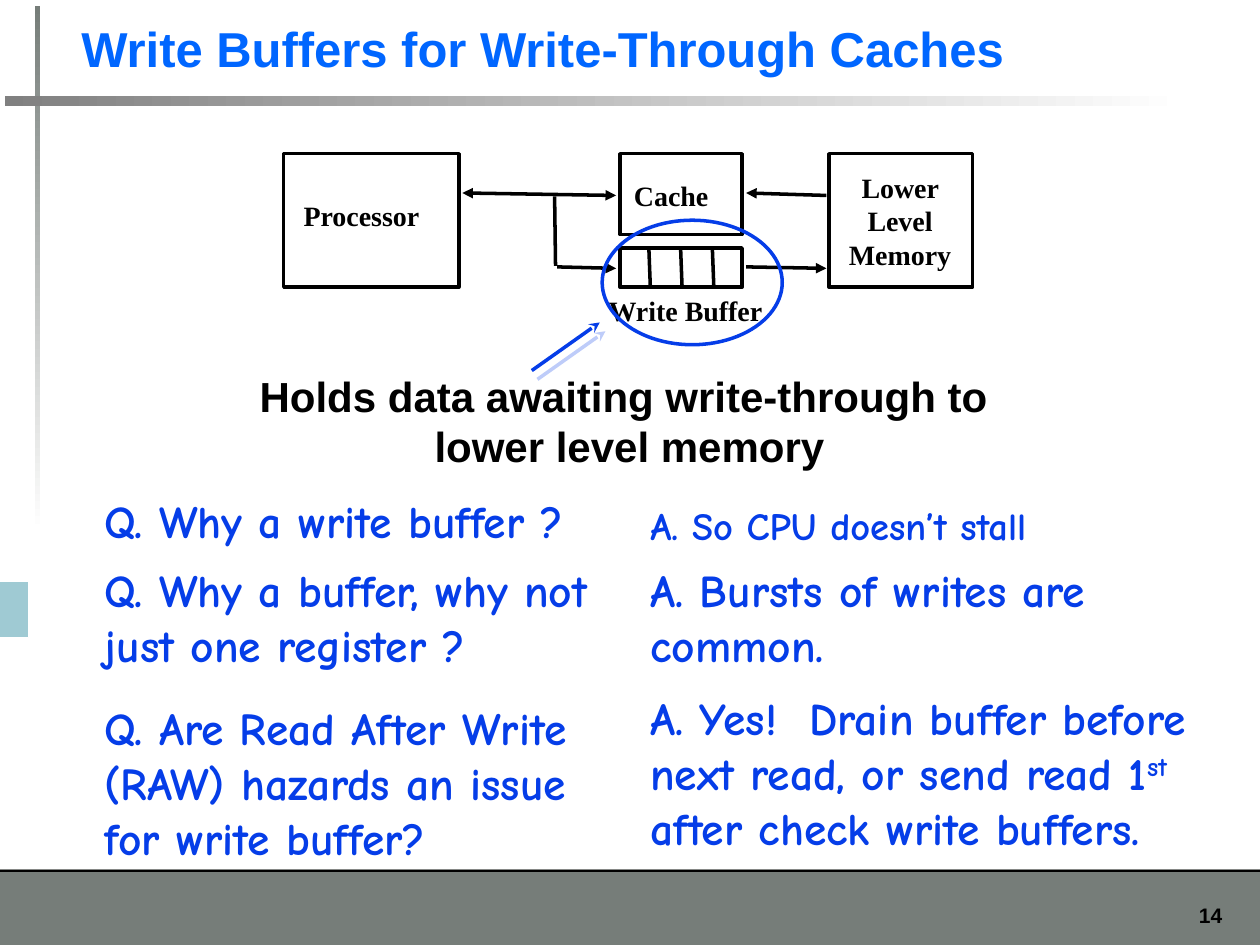
from lxml.etree import SubElement
from pptx import Presentation
from pptx.dml.color import RGBColor
from pptx.enum.shapes import MSO_CONNECTOR, MSO_SHAPE
from pptx.enum.text import MSO_ANCHOR, PP_ALIGN
from pptx.oxml.ns import qn
from pptx.util import Cm, Pt

BLACK, WHITE, GREY, BLUE = "000000", "FFFFFF", "767D79", "053DE8"
QUESTION_LEFT, ANSWER_LEFT = 2.11, 13.11


def colour(hex_value):
    """Turn a hex string into a colour."""
    return RGBColor.from_string(hex_value)


def add_span(para, text, font, size, hex_value, raised=False):
    """Add one bold run, raised as a superscript if asked."""
    span = para.add_run()
    span.text = text
    span.font.name = font
    span.font.size = Pt(size)
    span.font.bold = True
    span.font.color.rgb = colour(hex_value)
    if raised:
        span._r.get_or_add_rPr().set("baseline", "30000")


def add_text(shapes, place, lines, font, size, hex_value=BLACK,
             align=PP_ALIGN.LEFT, spacing=None):
    """Add a wrapped text box; each line is a list of text pieces, odd ones raised."""
    box = shapes.add_textbox(*map(Cm, place))
    frame = box.text_frame
    frame.word_wrap = True
    frame.margin_left = frame.margin_right = Cm(0)
    frame.margin_top = frame.margin_bottom = Cm(0)
    for index, pieces in enumerate(lines):
        para = frame.add_paragraph() if index else frame.paragraphs[0]
        para.alignment = align
        if spacing:
            para.line_spacing = Pt(spacing)
        for number, piece in enumerate(pieces):
            add_span(para, piece, font, size, hex_value, number % 2 == 1)


def add_block(shapes, place, fill=None, line=None, width=2, kind=MSO_SHAPE.RECTANGLE):
    """Add a shape with an optional solid fill and outline."""
    block = shapes.add_shape(kind, *map(Cm, place))
    block.shadow.inherit = False
    if fill:
        block.fill.solid()
        block.fill.fore_color.rgb = colour(fill)
    else:
        block.fill.background()
    if line:
        block.line.color.rgb = colour(line)
        block.line.width = Pt(width)
    else:
        block.line.fill.background()
    return block


def add_fading_bar(shapes, place, start, angle):
    """Add a bar that fades from a colour to white."""
    bar = add_block(shapes, place)
    bar.fill.gradient()
    bar.fill.gradient_angle = angle
    for stop, hex_value in zip(bar.fill.gradient_stops, (start, WHITE)):
        stop.color.rgb = colour(hex_value)


def add_line(shapes, start, end, hex_value=BLACK, head=None, tail=None):
    """Add a straight line with optional arrowheads and return its effect list."""
    line = shapes.add_connector(MSO_CONNECTOR.STRAIGHT, *map(Cm, start + end))
    line.line.color.rgb = colour(hex_value)
    line.line.width = Pt(2)
    outline = line.line._get_or_add_ln()
    for tag, kind in (("a:headEnd", head), ("a:tailEnd", tail)):
        if kind:
            SubElement(outline, qn(tag), type=kind)
    return SubElement(line._element.spPr, qn("a:effectLst"))


def add_shadow(effects, hex_value):
    """Put a pale offset shadow into an effect list."""
    shadow = SubElement(effects, qn("a:outerShdw"), dist=str(Pt(6)), dir="3420000")
    tint = SubElement(shadow, qn("a:srgbClr"), val=hex_value)
    SubElement(tint, qn("a:alpha"), val="25000")


def add_title(page):
    """Place and format the title."""
    title = page.shapes.title
    title.left, title.top, title.width, title.height = map(Cm, (0.2, 0.13, 24.92, 1.6))
    frame = title.text_frame
    frame.vertical_anchor = MSO_ANCHOR.BOTTOM
    frame.margin_left, frame.margin_bottom = Cm(1.44), Cm(0.17)
    para = frame.paragraphs[0]
    para.alignment = PP_ALIGN.LEFT
    add_span(para, "Write Buffers for Write-Through Caches", "Arial", 28, "0066FF")


def add_frame(shapes):
    """Draw the footer, page number and fading bars."""
    add_block(shapes, (0, 17.53, 25.4, 1.52), GREY)
    add_block(shapes, (0, 17.53, 25.4, 0.05), BLACK)
    add_text(shapes, (23.29, 18.19, 1.35, 0.51), [["14"]], "Arial", 12,
             align=PP_ALIGN.RIGHT)
    add_fading_bar(shapes, (0.71, 0.13, 0.1, 10.59), GREY, 270)
    add_fading_bar(shapes, (0.1, 1.93, 23.8, 0.2), "808080", 0)
    add_block(shapes, (-0.66, 11.73, 1.24, 1.12), "9FCAD3", WHITE, 0.75)


def add_diagram(shapes):
    """Draw processor, cache, write buffer and memory with their links."""
    for place in ((5.72, 3.1, 3.53, 2.69), (12.5, 3.1, 2.46, 1.63),
                  (12.5, 5, 2.46, 0.79), (16.71, 3.1, 2.9, 2.69)):
        add_block(shapes, place, line=BLACK)
    for index in range(3):
        left = 13.08 + 0.64 * index
        add_line(shapes, (left, 5), (left + 0.03, 5.79))
    arrow = "triangle"
    add_line(shapes, (11.18, 3.96), (11.2, 5.36))
    add_line(shapes, (11.23, 5.38), (12.42, 5.41), tail=arrow)
    add_line(shapes, (9.32, 3.89), (12.42, 3.94), head=arrow, tail=arrow)
    add_line(shapes, (15.04, 5.38), (16.66, 5.41), tail=arrow)
    add_line(shapes, (15.04, 3.89), (16.66, 3.94), head=arrow)
    for text, place, align in (
            ("Processor", (6.12, 4.01, 2.72, 0.64), PP_ALIGN.LEFT),
            ("Cache", (12.78, 3.61, 1.88, 0.64), PP_ALIGN.LEFT),
            ("Write Buffer", (12.27, 5.92, 3.51, 0.64), PP_ALIGN.LEFT),
            ("Lower Level Memory", (16.89, 3.45, 2.51, 1.93), PP_ALIGN.CENTER)):
        add_text(shapes, place, [[text]], "Times New Roman", 16, align=align, spacing=19)


def add_callout(shapes):
    """Circle the write buffer and explain it."""
    add_block(shapes, (12.14, 4.44, 3.63, 2.51), line=BLUE, kind=MSO_SHAPE.OVAL)
    effects = add_line(shapes, (10.72, 7.47), (12.09, 6.5), BLUE, tail="stealth")
    add_shadow(effects, BLUE)
    add_text(shapes, (2.49, 7.47, 20.4, 2.06),
             [["Holds data awaiting write-through to "], ["lower level memory"]],
             "Arial", 24, align=PP_ALIGN.CENTER)


def add_questions(shapes):
    """Write the questions on the left and the answers on the right."""
    for left, top, width, height, size, lines in (
            (QUESTION_LEFT, 9.93, 10.29, 1.12, 26, [["Q. Why a write buffer ?"]]),
            (ANSWER_LEFT, 10.13, 10.46, 0.94, 22, [["A. So CPU doesn’t stall"]]),
            (QUESTION_LEFT, 11.33, 10.36, 2.24, 26,
             [["Q. Why a buffer, why not just one register ?"]]),
            (ANSWER_LEFT, 11.33, 10.49, 2.24, 26,
             [["A. Bursts of writes are"], ["common."]]),
            (QUESTION_LEFT, 14.12, 10.74, 3.33, 26,
             [["Q. Are Read After Write (RAW) hazards an issue for write buffer?"]]),
            (ANSWER_LEFT, 13.92, 12.29, 3.33, 26,
             [["A. Yes!  Drain buffer before next read, or send read 1", "st",
               " after check write buffers."]])):
        add_text(shapes, (left, top, width, height), lines, "Comic Neue", size, BLUE)


def main():
    """Build the slide and save the deck."""
    deck = Presentation()
    deck.slide_width, deck.slide_height = Cm(25.4), Cm(19.05)
    page = deck.slides.add_slide(deck.slide_layouts[5])
    add_frame(page.shapes)
    add_title(page)
    add_diagram(page.shapes.add_group_shape().shapes)
    add_callout(page.shapes.add_group_shape().shapes)
    add_questions(page.shapes)
    deck.save("out.pptx")


if __name__ == "__main__":
    main()
